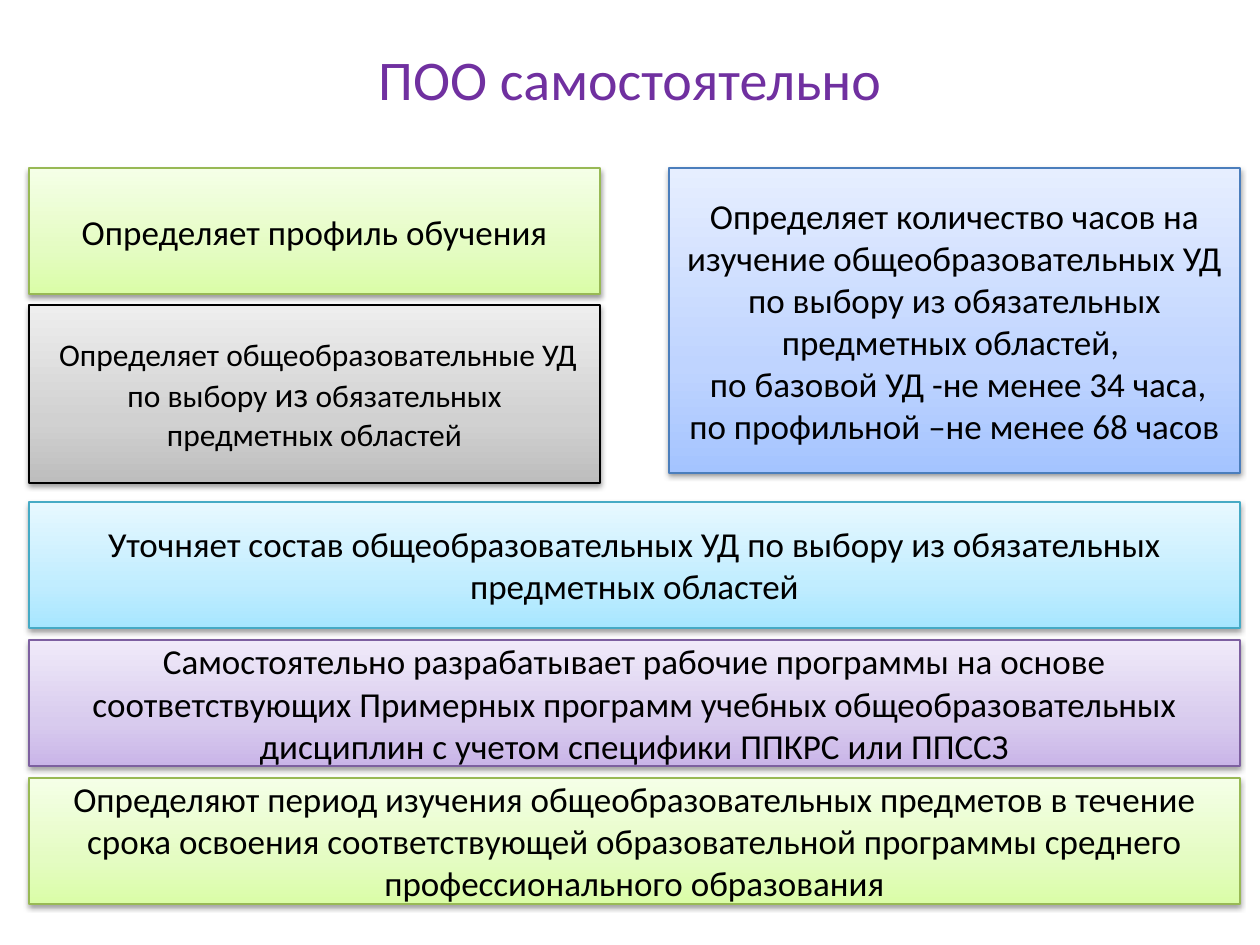
import copy

import lxml.etree
import pptx
import pptx.dml.color
import pptx.enum.shapes
import pptx.enum.text
import pptx.oxml.ns
import pptx.util

RGB = pptx.dml.color.RGBColor
qn = pptx.oxml.ns.qn
MID = pptx.enum.text.MSO_ANCHOR.MIDDLE
CENTER = pptx.enum.text.PP_ALIGN.CENTER

SCALE = 914400 / 126
FONT = "Calibri"
BLACK = RGB(0x00, 0x00, 0x00)
VIOLET = RGB(0x70, 0x30, 0xA0)

# Each theme: line colour, then gradient colours from bottom to top.
GREEN = (RGB(0x98, 0xB9, 0x55), RGB(0xDA, 0xFD, 0xA7),
         RGB(0xE4, 0xFC, 0xC2), RGB(0xF5, 0xFF, 0xE7))
GREY = (BLACK, RGB(0xBD, 0xBD, 0xBD),
        RGB(0xD1, 0xD1, 0xD1), RGB(0xEE, 0xEE, 0xEE))
BLUE = (RGB(0x4B, 0x7E, 0xBC), RGB(0xA4, 0xC4, 0xFF),
        RGB(0xBF, 0xD4, 0xFF), RGB(0xE6, 0xEE, 0xFF))
AQUA = (RGB(0x46, 0xAA, 0xC5), RGB(0xA7, 0xE6, 0xFF),
        RGB(0xC1, 0xED, 0xFF), RGB(0xE7, 0xF8, 0xFF))
PURPLE = (RGB(0x7D, 0x60, 0xA0), RGB(0xC9, 0xB5, 0xE8),
          RGB(0xD8, 0xCB, 0xEE), RGB(0xF0, 0xEA, 0xF9))
STOPS = (0, 0.35, 1)

LEFT, RIGHT = 29, 669
HALF, FULL = 571, 1211
TOP, BAND, PITCH = 168, 126, 138
LOW = 502

PROFILE = ["Определяет профиль обучения"]
CHOICE = [" Определяет общеобразовательные УД по выбору ", "из",
          " обязательных предметных областей"]
HOURS = [
    "Определяет количество часов на изучение общеобразовательных УД "
    "по выбору из обязательных предметных областей, ",
    " по базовой УД -не менее 34 часа,",
    "по профильной –не менее 68 часов",
]
BANDS = [
    (AQUA, "Уточняет состав общеобразовательных УД по выбору из "
           "обязательных предметных областей"),
    (PURPLE, "Самостоятельно разрабатывает рабочие программы на основе "
             "соответствующих Примерных программ учебных "
             "общеобразовательных дисциплин с учетом специфики ППКРС "
             "или ППССЗ"),
    (GREEN, "Определяют период изучения общеобразовательных предметов в "
            "течение срока освоения соответствующей образовательной "
            "программы среднего профессионального образования"),
]


def px(size):
    return pptx.util.Emu(round(size * SCALE))


def place(shape, box):
    shape.left, shape.top, shape.width, shape.height = map(px, box)


def style(para, size, color):
    para.alignment = CENTER
    para.font.name = FONT
    para.font.size = pptx.util.Pt(size)
    para.font.color.rgb = color


def shade(shape, colors):
    """Fill with a three-stop vertical gradient, first colour at the bottom."""
    fill = shape.fill
    fill.gradient()
    fill.gradient_angle = 90
    stops = shape._element.spPr.find(qn("a:gradFill")).find(qn("a:gsLst"))
    stops.append(copy.deepcopy(stops[0]))
    for stop, pos, color in zip(fill.gradient_stops, STOPS, colors):
        stop.position = pos
        stop.color.rgb = color


def drop(shape):
    """Give the shape a soft shadow straight below it."""
    shape.shadow.inherit = False
    effects = shape._element.spPr.find(qn("a:effectLst"))
    outer = lxml.etree.SubElement(
        effects, qn("a:outerShdw"), blurRad=str(pptx.util.Pt(3.1)),
        dist=str(pptx.util.Pt(1.6)), dir="5400000", rotWithShape="0")
    color = lxml.etree.SubElement(outer, qn("a:srgbClr"), val="000000")
    lxml.etree.SubElement(color, qn("a:alpha"), val="38000")


def panel(slide, box, theme, lines):
    shape = slide.shapes.add_shape(
        pptx.enum.shapes.MSO_SHAPE.RECTANGLE, *map(px, box))
    edge, *colors = theme
    shade(shape, colors)
    shape.line.color.rgb = edge
    shape.line.width = pptx.util.Pt(0.75)
    drop(shape)
    frame = shape.text_frame
    frame.word_wrap = True
    frame.vertical_anchor = MID
    frame.text = "\n".join(lines)
    for para in frame.paragraphs:
        style(para, 20, BLACK)
    return shape


def mixed(shape, parts, sizes):
    """Set one paragraph whose runs differ in size."""
    para = shape.text_frame.paragraphs[0]
    para.clear()
    for text, size in zip(parts, sizes):
        run = para.add_run()
        run.text = text
        run.font.size = pptx.util.Pt(size)


def heading(slide, text):
    title = slide.shapes.title
    place(title, (63, 38, 1134, 81))
    title.text_frame.text = text
    title.text_frame.vertical_anchor = MID
    style(title.text_frame.paragraphs[0], 32, VIOLET)


def main():
    deck = pptx.Presentation()
    deck.slide_width, deck.slide_height = px(1260), px(945)
    slide = deck.slides.add_slide(deck.slide_layouts[5])
    heading(slide, "ПОО самостоятельно")
    panel(slide, (LEFT, TOP, HALF, BAND), GREEN, PROFILE)
    choice = panel(slide, (LEFT, 305, HALF, 178), GREY, [])
    mixed(choice, CHOICE, (18, 20, 18))
    panel(slide, (RIGHT, TOP, HALF, 305), BLUE, HOURS)
    for row, (theme, text) in enumerate(BANDS):
        panel(slide, (LEFT, LOW + row * PITCH, FULL, BAND), theme, [text])
    deck.save("out.pptx")


if __name__ == "__main__":
    main()
